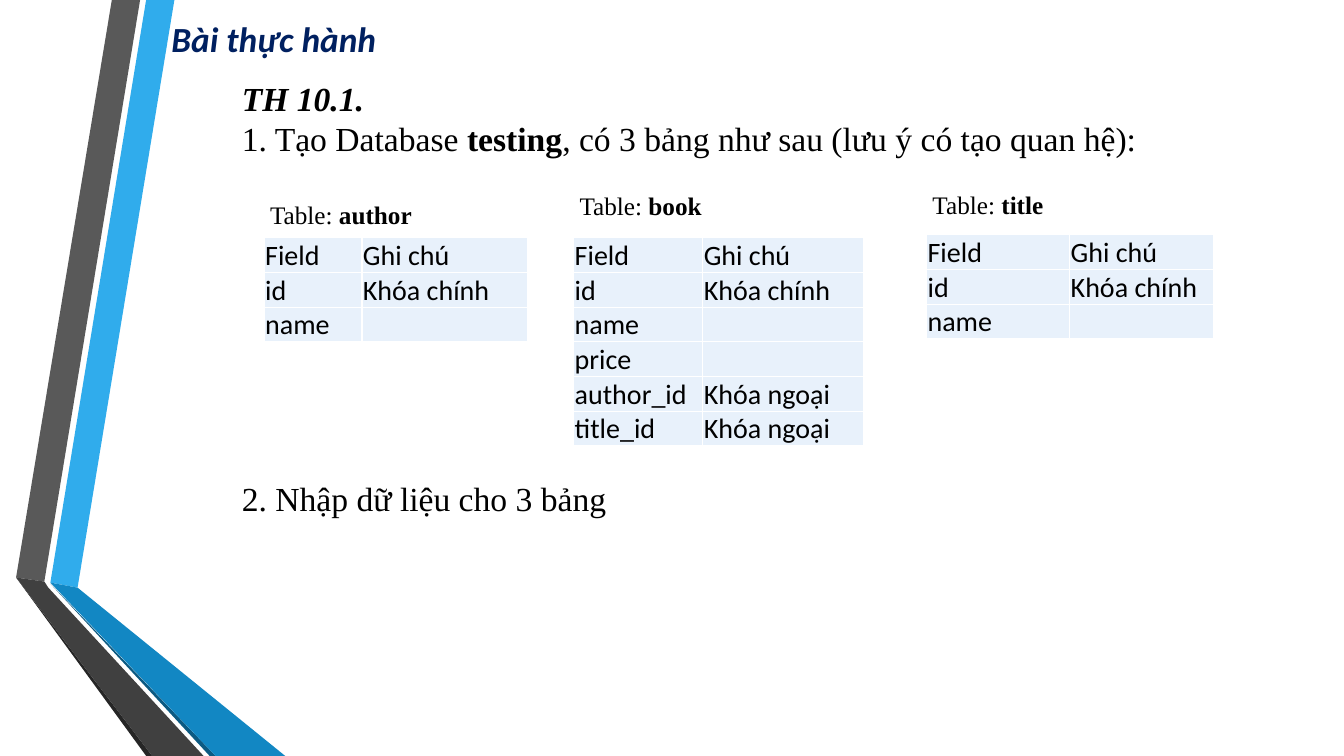
import pptx
import pptx.util
import pptx.dml.color
import pptx.enum.text

Pt = pptx.util.Pt
RGB = pptx.dml.color.RGBColor
ALIGN = pptx.enum.text.PP_ALIGN
ANCHOR = pptx.enum.text.MSO_ANCHOR

SKY = RGB(0x30, 0xAC, 0xEC)
BLUE = RGB(0x12, 0x87, 0xC3)
DEEP = RGB(0x0C, 0x5A, 0x82)
GRAY = RGB(0x59, 0x59, 0x59)
COAL = RGB(0x40, 0x40, 0x40)
INK = RGB(0x26, 0x26, 0x26)
NAVY = RGB(0x00, 0x20, 0x60)
PALE = RGB(0xE8, 0xF1, 0xFB)
BLACK = RGB(0, 0, 0)
SERIF = "Times New Roman"
SANS = "Calibri"

# The slide is a grid of 1333 columns by 750 rows of square cells
COLS, ROWS = 1333, 750
CELL = pptx.util.Inches(7.5) // ROWS

deck = pptx.Presentation()
deck.slide_width, deck.slide_height = COLS * CELL, ROWS * CELL
slide = deck.slides.add_slide(deck.slide_layouts[5])
shapes = slide.shapes


def style(font, size, name, color=BLACK):
    font.size, font.name = Pt(size), name
    font.color.rgb = color


def write(place, lines, size, wrap=False):
    """Add a text box; each line is a list of (text, bold, italic)."""
    box = shapes.add_textbox(*[n * CELL for n in place])
    frame = box.text_frame
    frame.word_wrap = wrap
    frame.auto_size = pptx.enum.text.MSO_AUTO_SIZE.SHAPE_TO_FIT_TEXT
    for i, line in enumerate(lines):
        para = frame.add_paragraph() if i else frame.paragraphs[0]
        for text, bold, slant in line:
            run = para.add_run()
            run.text = text
            style(run.font, size, SERIF)
            run.font.bold, run.font.italic = bold, slant
    return frame


# Folded ribbons on the left edge
ribbons = [
    (SKY, [(50, 578), (77, 583), (173, 0), (145, 0)]),
    (GRAY, [(139, 0), (111, 0), (16, 573), (44, 577)]),
    (INK, [(16, 573), (145, ROWS), (151, ROWS)]),
    (DEEP, [(50, 579), (208, ROWS), (214, ROWS)]),
    (BLUE, [(50, 578), (214, ROWS), (283, ROWS), (77, 583)]),
    (COAL, [(202, ROWS), (48, 583), (44, 577), (16, 573), (151, ROWS)]),
]
for color, points in ribbons:
    pen = shapes.build_freeform(*points[0], scale=CELL)
    pen.add_line_segments(points[1:], close=True)
    band = pen.convert_to_shape()
    band.shadow.inherit = False
    band.fill.solid()
    band.fill.fore_color.rgb = color
    band.line.fill.background()

# Title, raised above the ribbons
title = shapes.title
shapes._spTree.append(title._element)
title.left, title.top = 160 * CELL, 0
title.width, title.height = 1159 * CELL, 55 * CELL
frame = title.text_frame
frame.text = "Bài thực hành"
frame.auto_size = pptx.enum.text.MSO_AUTO_SIZE.NONE
frame.vertical_anchor = ANCHOR.MIDDLE
head = frame.paragraphs[0]
head.alignment = ALIGN.LEFT
head.line_spacing = 1.5
font = head.runs[0].font
style(font, 25.2, SANS, NAVY)
font.bold = font.italic = True

# Tasks
write((230, 72, 915, 91), [
    [("TH 10.1.", True, True)],
    [("1. Tạo Database ", False, False), ("testing", True, False),
     (", có 3 bảng như sau (lưu ý có tạo quan hệ):", False, False)],
], 24)
task = write((230, 469, 1005, 50),
             [[("2. Nhập dữ liệu cho 3 bảng", False, False)]], 24, True)
task.paragraphs[0].alignment = ALIGN.JUSTIFY

# Database tables: name, left, top, label top and width, column widths, fields
HIGH = 34
base = [("Field", "Ghi chú"), ("id", "Khóa chính"), ("name", "")]
more = [("price", ""), ("author_id", "Khóa ngoại"), ("title_id", "Khóa ngoại")]
tables = [
    ("author", 262, 236, 193, 162, (97, 164), base),
    ("book", 569, 236, 184, 143, (128, 160), base + more),
    ("title", 919, 233, 183, 131, (142, 143), base),
]
for name, left, top, over, span, wides, rows in tables:
    grid = shapes.add_table(len(rows), 2, left * CELL, top * CELL,
                            sum(wides) * CELL, len(rows) * HIGH * CELL).table
    grid.first_row = grid.horz_banding = False
    for col, wide in zip(grid.columns, wides):
        col.width = wide * CELL
    for r, row in enumerate(rows):
        grid.rows[r].height = HIGH * CELL
        for c, text in enumerate(row):
            cell = grid.cell(r, c)
            cell.text = text
            cell.fill.solid()
            cell.fill.fore_color.rgb = PALE
            cell.vertical_anchor = ANCHOR.BOTTOM
            cell.margin_left = cell.margin_right = cell.margin_top = CELL
            cell.margin_bottom = 0
            style(cell.text_frame.paragraphs[0].font, 20, SANS)
    write((left - 4, over, span, 40),
          [[("Table: ", False, False), (name, True, False)]], 18)

deck.save("out.pptx")
